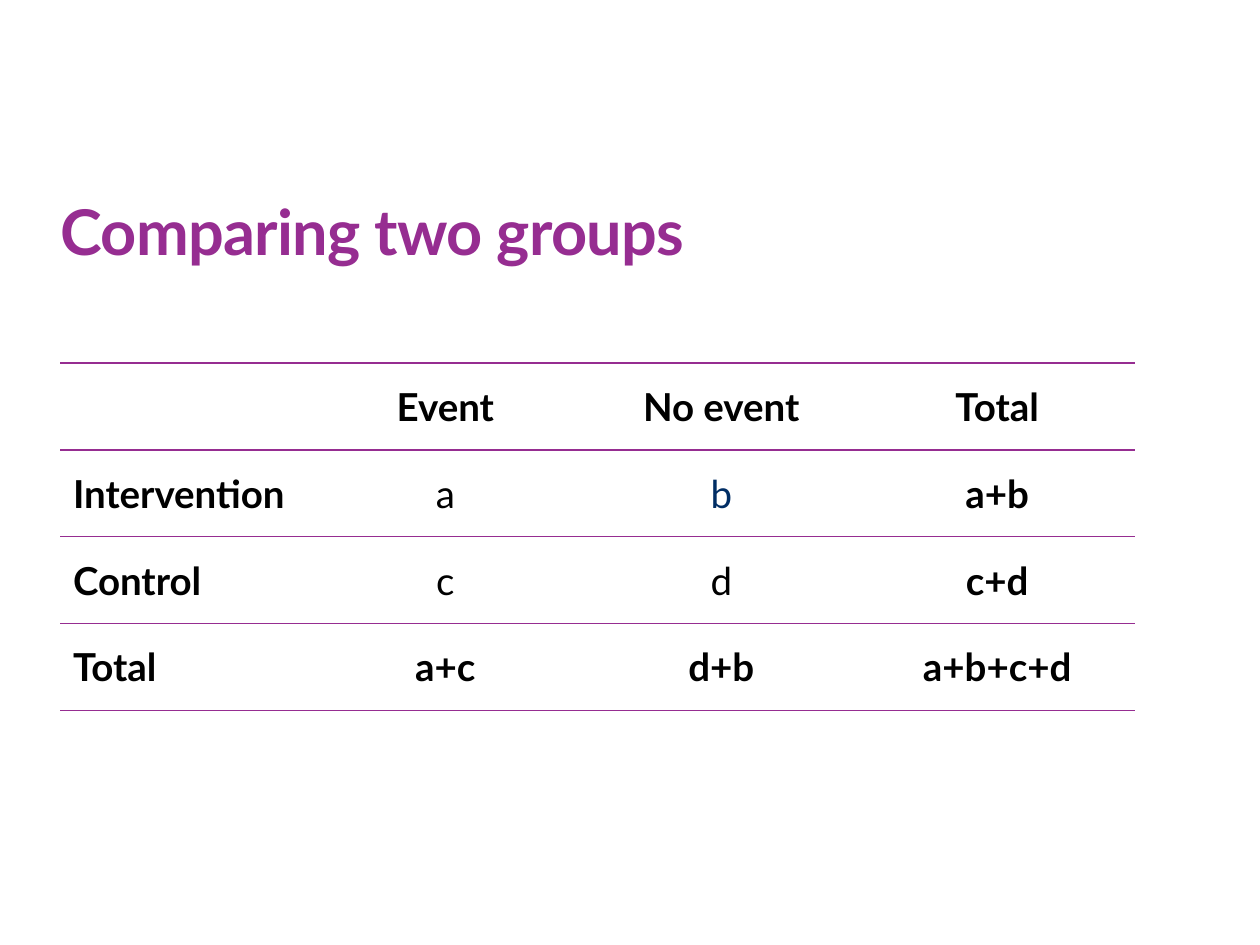
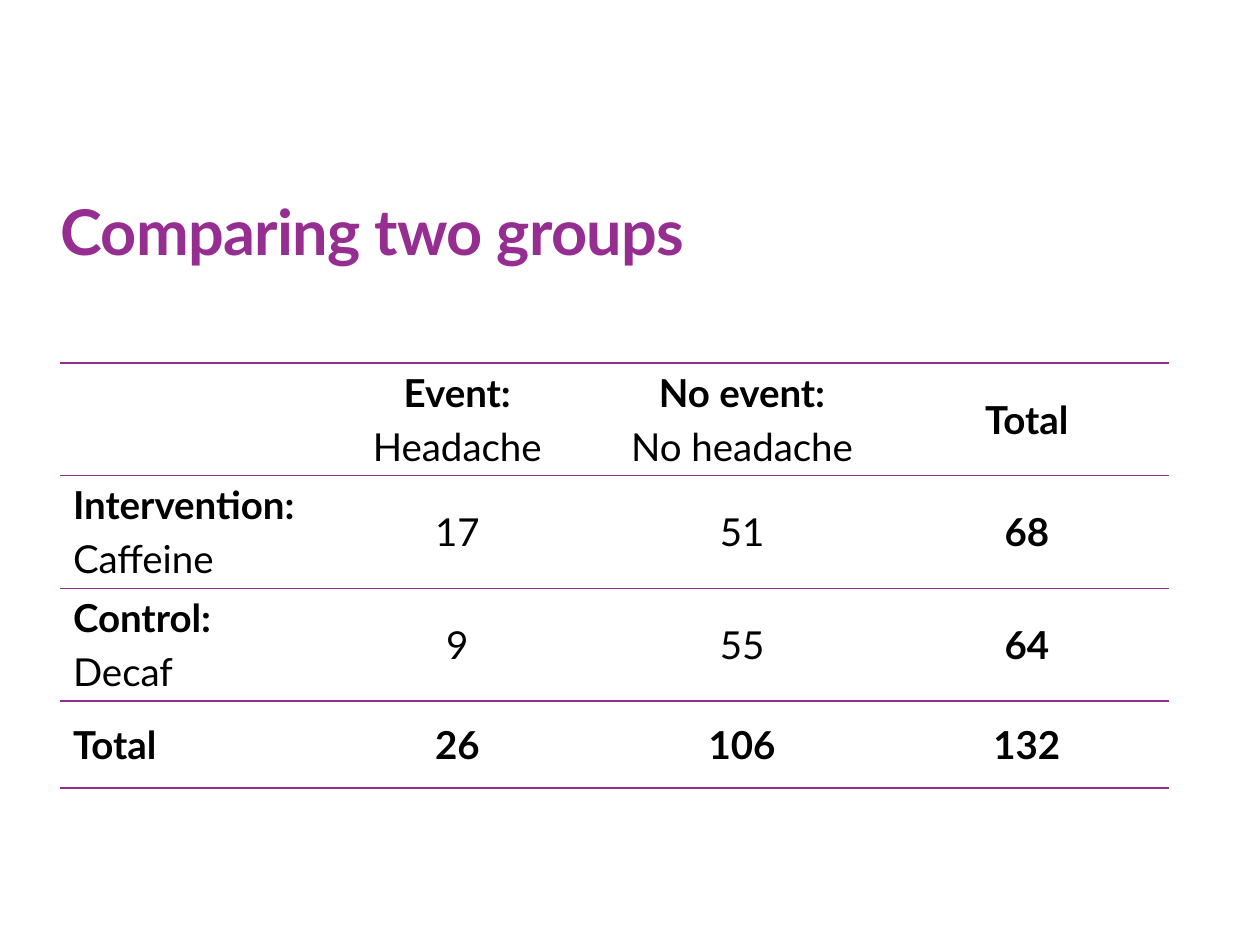
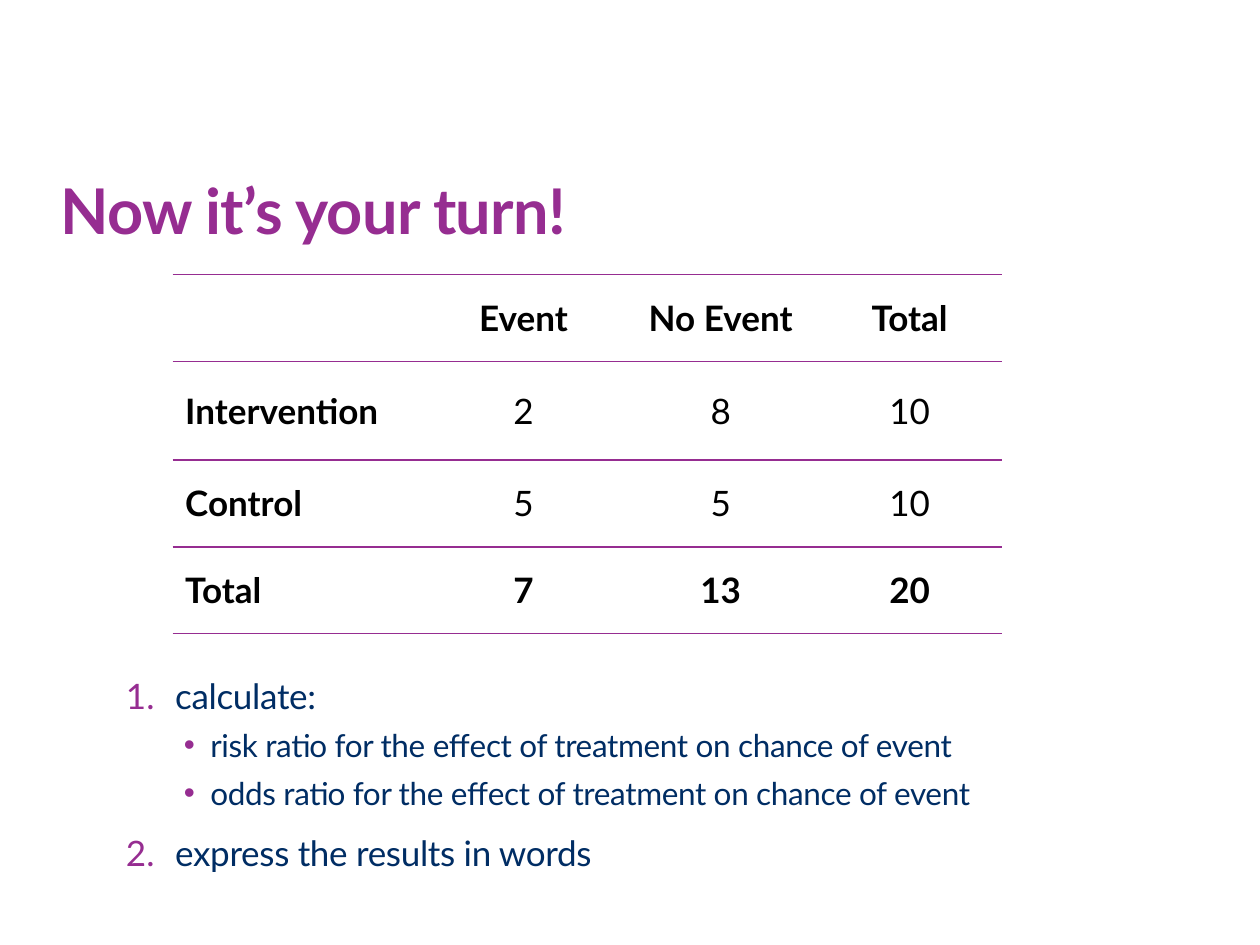
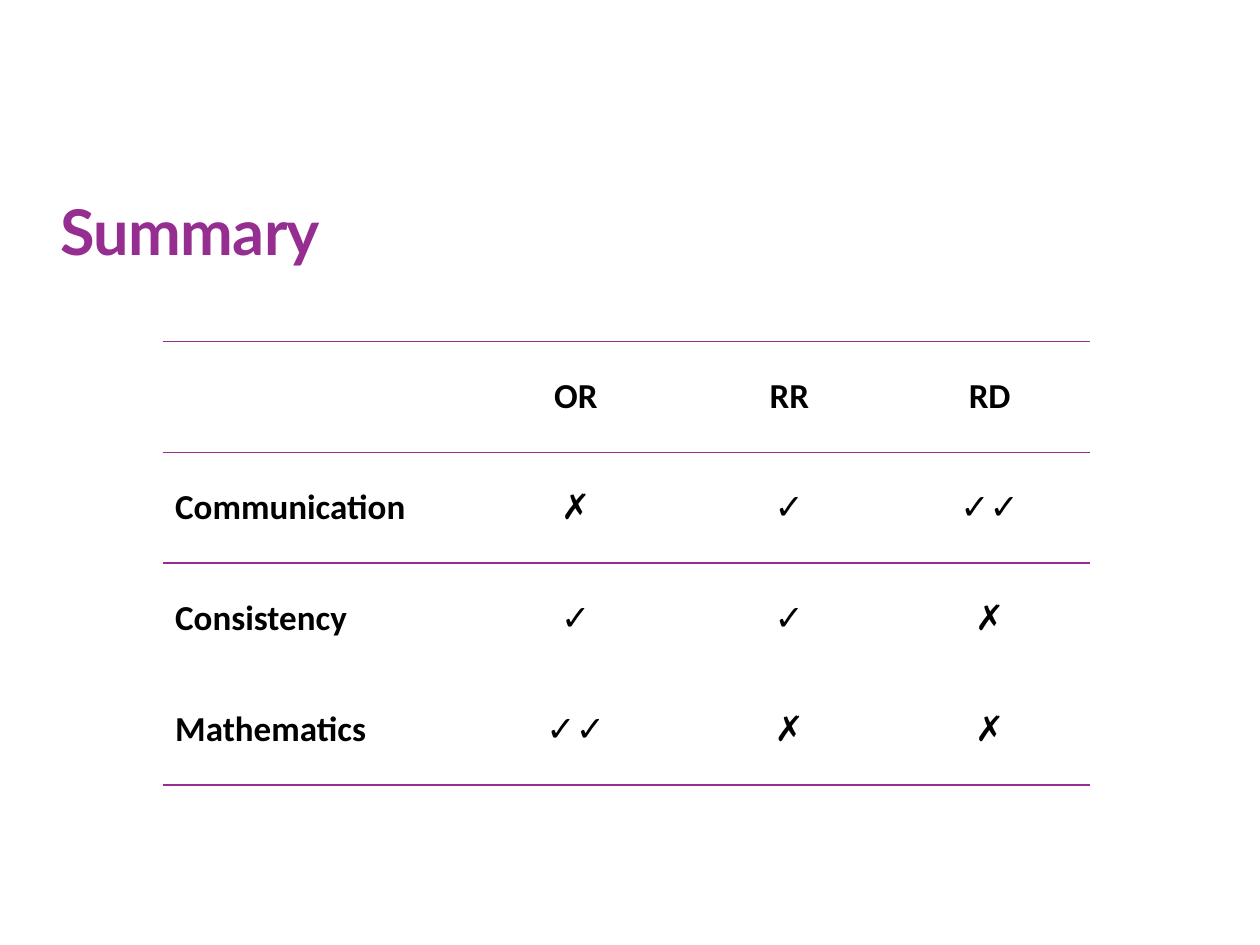
from dataclasses import dataclass

import pptx
import pptx.dml.color
import pptx.enum.text
import pptx.oxml.ns
import pptx.util
from lxml import etree

ALIGN = pptx.enum.text.PP_ALIGN
ANCHOR = pptx.enum.text.MSO_ANCHOR
COLUMNS, ROWS = 100, 75
SLIDE_WIDTH, SLIDE_HEIGHT = pptx.util.Inches(10), pptx.util.Inches(7.5)
PLAIN_TABLE_STYLE = "{2D5ABB26-0587-4C30-8999-92F81FD0307C}"


@dataclass(frozen=True)
class Theme:
    purple: str = "962D91"
    navy: str = "002D64"
    black: str = "000000"
    white: str = "FFFFFF"
    font: str = "Lato"
    summary_font: str = "Calibri"
    title: int = 36
    large: int = 22
    medium: int = 20
    small: int = 18
    rule: int = 1


THEME = Theme()


def across(columns):
    return round(SLIDE_WIDTH * columns / COLUMNS)


def down(rows):
    return round(SLIDE_HEIGHT * rows / ROWS)


def add_xml(parent, tag, **attributes):
    return etree.SubElement(parent, pptx.oxml.ns.qn(tag), attributes)


def write(paragraph, text, size, color=THEME.black, font=THEME.font, bold=False,
          align=ALIGN.LEFT, before=0, spacing=0):
    paragraph.alignment = align
    paragraph.space_before = pptx.util.Pt(before)
    run = paragraph.add_run()
    run.text = text
    run.font.size = pptx.util.Pt(size)
    run.font.name = font
    run.font.bold = bold
    run.font.color.rgb = pptx.dml.color.RGBColor.from_string(color)
    if spacing:
        run.font._element.set("spc", str(round(spacing * 100)))


def clear_insets(frame):
    frame.margin_left = frame.margin_right = frame.margin_top = frame.margin_bottom = 0
    frame.word_wrap = True
    frame.auto_size = pptx.enum.text.MSO_AUTO_SIZE.NONE


def add_titled_slide(deck, heading, top=14.4):
    slide = deck.slides.add_slide(deck.slide_layouts[5])
    slide.background.fill.solid()
    slide.background.fill.fore_color.rgb = pptx.dml.color.RGBColor.from_string(THEME.white)
    title = slide.shapes.title
    title.left, title.top = across(4.8), down(top)
    title.width, title.height = across(66.9), down(6.9)
    clear_insets(title.text_frame)
    title.text_frame.vertical_anchor = ANCHOR.BOTTOM
    write(title.text_frame.paragraphs[0], heading, THEME.title,
          color=THEME.purple, bold=True, spacing=-0.4)
    return slide


def rule_cell(cell, above, below):
    properties = cell._tc.get_or_add_tcPr()
    for tag, visible in (("a:lnT", above), ("a:lnB", below)):
        if visible:
            line = add_xml(properties, tag, w=str(pptx.util.Pt(THEME.rule)))
            add_xml(add_xml(line, "a:solidFill"), "a:srgbClr", val=THEME.purple)


def add_ruled_table(slide, left, top, widths, heights, content, rules, bold_rows, bold_columns,
                    size=THEME.large, font=THEME.font, accents=()):
    frame = slide.shapes.add_table(len(heights), len(widths), across(left), down(top),
                                   across(sum(widths)), down(sum(heights)))
    table = frame.table
    table._tbl.tblPr.find(pptx.oxml.ns.qn("a:tableStyleId")).text = PLAIN_TABLE_STYLE
    for column, width in zip(table.columns, widths):
        column.width = across(width)
    for row, height in zip(table.rows, heights):
        row.height = down(height)
    for r, entries in enumerate(content):
        for c, entry in enumerate(entries):
            cell = table.cell(r, c)
            rule_cell(cell, r in rules, r + 1 in rules)
            cell.fill.background()
            cell.vertical_anchor = ANCHOR.MIDDLE
            for index, line in enumerate(entry.split("\n") if entry else ()):
                frame = cell.text_frame
                paragraph = frame.add_paragraph() if index else frame.paragraphs[0]
                write(paragraph, line, size, font=font,
                      color=THEME.navy if (r, c) in accents else THEME.black,
                      bold=index == 0 and (r in bold_rows or c in bold_columns),
                      align=ALIGN.CENTER if c else ALIGN.LEFT,
                      before=0.2 * size if index else 0)


def add_marker(paragraph, indent, hanging, numbered):
    properties = paragraph._p.get_or_add_pPr()
    properties.set("marL", str(across(indent)))
    properties.set("indent", str(-across(hanging)))
    add_xml(add_xml(properties, "a:buClr"), "a:srgbClr", val=THEME.purple)
    if numbered:
        add_xml(properties, "a:buFont", typeface=THEME.font)
        add_xml(properties, "a:buAutoNum", type="arabicPeriod")
    else:
        add_xml(properties, "a:buFont", typeface="Arial")
        add_xml(properties, "a:buChar", char="•")


def add_tasks(slide, tasks):
    box = slide.shapes.add_textbox(across(10), down(53.5), across(90), down(20.2))
    frame = box.text_frame
    clear_insets(frame)
    for index, (text, is_step) in enumerate(tasks):
        paragraph = frame.add_paragraph() if index else frame.paragraphs[0]
        paragraph.level = 0 if is_step else 3
        if is_step:
            add_marker(paragraph, 3.9, 3.9, True)
            size, before = THEME.medium, 11.3
        else:
            add_marker(paragraph, 6.7, 2.1, False)
            size, before = THEME.small, 5.7
        write(paragraph, text, size, color=THEME.navy,
              before=before if index else 0, spacing=-0.2)


def main():
    deck = pptx.Presentation()
    deck.slide_width, deck.slide_height = SLIDE_WIDTH, SLIDE_HEIGHT
    with_totals = dict(rules=(0, 1, 3, 4), bold_rows=(0, 3))

    notation = add_titled_slide(deck, "Comparing two groups")
    add_ruled_table(notation, 4.8, 28.8, [19.6] + [21.9] * 3, [6.9] * 4, [
        ["", "Event", "No event", "Total"],
        ["Intervention", "a", "b", "a+b"],
        ["Control", "c", "d", "c+d"],
        ["Total", "a+c", "d+b", "a+b+c+d"],
    ], bold_columns=(0, 3), accents=[(1, 2)], **with_totals)

    headache = add_titled_slide(deck, "Comparing two groups")
    add_ruled_table(headache, 4.8, 28.8, [20.2] + [22.6] * 3, [8.9] * 3 + [6.9], [
        ["", "Event:\nHeadache", "No event:\nNo headache", "Total"],
        ["Intervention:\nCaffeine", "17", "51", "68"],
        ["Control:\nDecaf", "9", "55", "64"],
        ["Total", "26", "106", "132"],
    ], bold_columns=(0, 3), **with_totals)

    exercise = add_titled_slide(deck, "Now it’s your turn!", top=12.7)
    add_tasks(exercise, [
        ("calculate:", True),
        ("risk ratio for the effect of treatment on chance of event", False),
        ("odds ratio for the effect of treatment on chance of event", False),
        ("express the results in words", True),
    ])
    add_ruled_table(exercise, 13.7, 21.8, [19.9, 15.9, 15.4, 14.6], [6.9, 7.8, 6.9, 6.9], [
        ["", "Event", "No Event", "Total"],
        ["Intervention", "2", "8", "10"],
        ["Control", "5", "5", "10"],
        ["Total", "7", "13", "20"],
    ], bold_columns=(0,), size=THEME.medium, **with_totals)

    summary = add_titled_slide(deck, "Summary")
    add_ruled_table(summary, 12.9, 27.1, [23.8, 18, 15.9, 15.9], [8.8] * 4, [
        ["", "OR", "RR", "RD"],
        ["Communication", "✗", "✓", "✓✓"],
        ["Consistency", "✓", "✓", "✗"],
        ["Mathematics", "✓✓", "✗", "✗"],
    ], rules=(0, 1, 4), bold_rows=(0,), bold_columns=(0,),
        size=THEME.medium, font=THEME.summary_font)

    deck.save("out.pptx")


if __name__ == "__main__":
    main()
